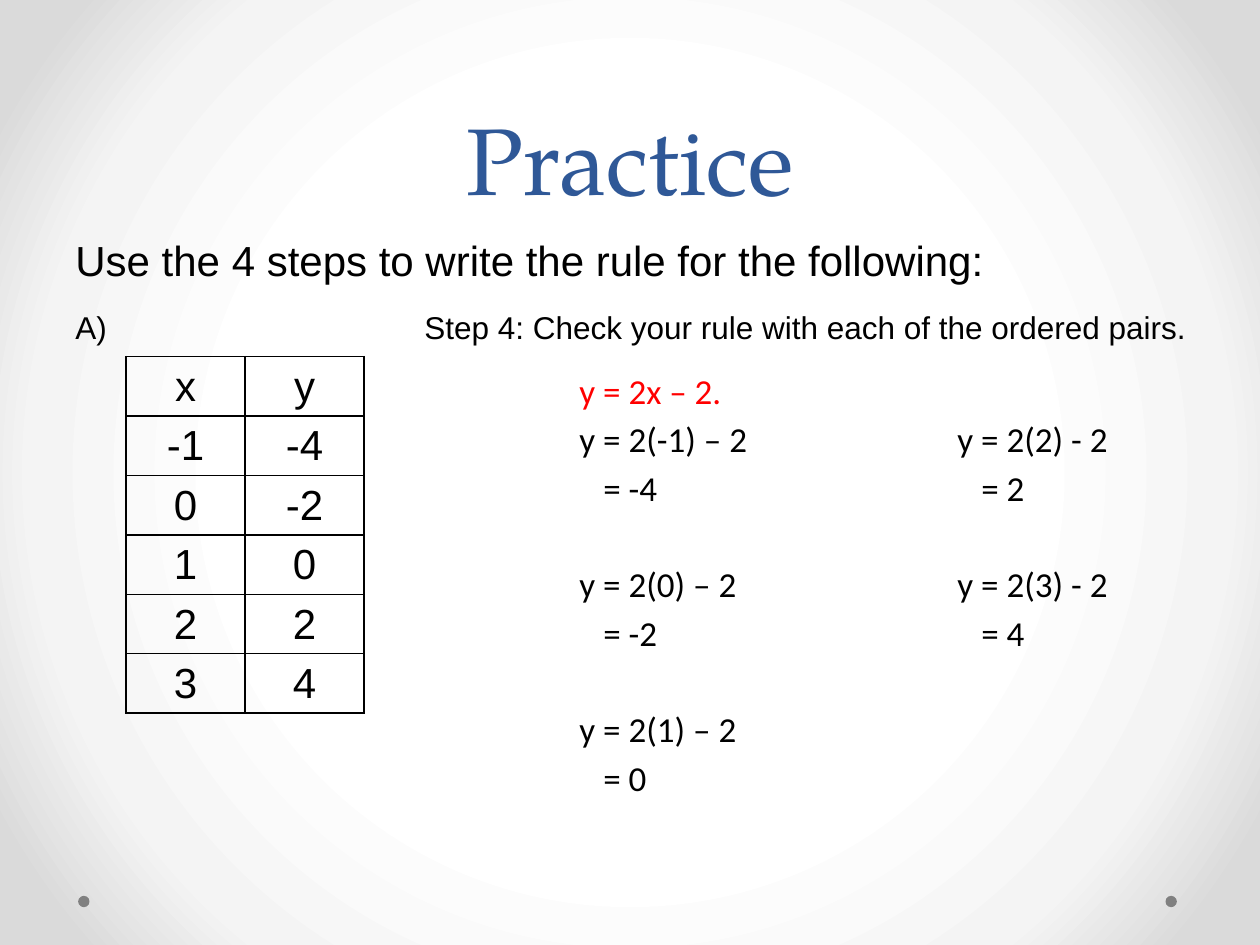
from lxml import etree
from pptx import Presentation, util as u
from pptx.dml.color import RGBColor
from pptx.enum import shapes, text
from pptx.oxml import parse_xml
from pptx.oxml.ns import nsdecls, qn

HUES = {"title": "2F5897", "ink": "000000", "rule": "FF0000", "dot": "808080"}
GLOW = [(50, "FFFFFF"), (76, "F4F4F4"), (92, "DADADA")]
WIDE, HIGH = u.Inches(10), u.Inches(7.5)
COLS, ROWS = 40, 30
PAIRS = [("x", "y"), (-1, -4), (0, -2), (1, 0), (2, 2), (3, 4)]

# Tab stops in inches from the text edge
STEP = [2.77]
EQUALS = [4, 7]
ANSWER = [4.19, 7.19]


def grid(*cells):
    """Turn columns and rows (x, y, w, h) into lengths."""
    return [int(n * side) for n, side in zip(cells, (WIDE / COLS, HIGH / ROWS) * 2)]


def write(par, words, size=20, font="Calibri", hue="ink", align=None,
          line=1.15, before=0, after=0, tabs=()):
    par.alignment, par.line_spacing = align, line
    par.space_before, par.space_after = u.Pt(before), u.Pt(after)
    run = par.add_run()
    run.text = str(words)
    run.font.size, run.font.name = u.Pt(size), font
    run.font.color.rgb = RGBColor.from_string(HUES[hue])
    if tabs:
        stops = etree.SubElement(par._p.get_or_add_pPr(), qn("a:tabLst"))
        for stop in tabs:
            etree.SubElement(stops, qn("a:tab"), pos=str(u.Inches(stop)), algn="l")


def box(slide, cells, anchor=text.MSO_ANCHOR.TOP):
    frame = slide.shapes.add_textbox(*grid(*cells)).text_frame
    frame.word_wrap, frame.vertical_anchor = True, anchor
    return frame


def paint(slide):
    stops = "".join(f'<a:gs pos="{pos * 1000}"><a:srgbClr val="{hue}"/></a:gs>'
                    for pos, hue in GLOW)
    back = parse_xml(
        f'<p:bg {nsdecls("p", "a")}><p:bgPr><a:gradFill rotWithShape="1">'
        f'<a:gsLst>{stops}</a:gsLst><a:path path="circle">'
        '<a:fillToRect l="50000" t="50000" r="50000" b="50000"/></a:path>'
        '</a:gradFill><a:effectLst/></p:bgPr></p:bg>')
    slide._element.cSld.insert(0, back)


def dot(slide, col):
    mark = slide.shapes.add_shape(shapes.MSO_SHAPE.OVAL, *grid(col, 28.44, 0.36, 0.36))
    mark.shadow.inherit = False
    mark.fill.solid()
    mark.fill.fore_color.rgb = RGBColor.from_string(HUES["dot"])
    mark.line.fill.background()


def edge(cell):
    props = cell._tc.get_or_add_tcPr()
    for i, side in enumerate(("lnL", "lnR", "lnT", "lnB")):
        props.insert(i, parse_xml(
            f'<a:{side} {nsdecls("a")} w="{u.Pt(1)}"><a:solidFill>'
            f'<a:srgbClr val="{HUES["ink"]}"/></a:solidFill></a:{side}>'))


def chart(slide, rows, cells):
    table = slide.shapes.add_table(len(rows), len(rows[0]), *grid(*cells)).table
    table.first_row = table.horz_banding = False
    for r, row in enumerate(rows):
        for c, value in enumerate(row):
            cell = table.cell(r, c)
            cell.fill.background()
            cell.margin_left = cell.margin_right = u.Inches(0.07)
            cell.margin_top = cell.margin_bottom = 0
            write(cell.text_frame.paragraphs[0], value, size=24, font="Arial",
                  align=text.PP_ALIGN.CENTER)
            edge(cell)


def body(slide):
    lines = [
        ("Use the 4 steps to write the rule for the following:",
         dict(size=24, font="Arial", after=10)),
        ("A)\tStep 4: Check your rule with each of the ordered pairs.",
         dict(size=18, font="Arial", after=10, tabs=STEP)),
        ("\ty = 2x – 2.", dict(hue="rule", tabs=EQUALS)),
    ]
    # Each check is an equation over its answer, with a line's gap between checks
    checks = [("\ty = 2(-1) – 2\ty = 2(2) - 2", "\t= -4\t= 2"),
              ("\ty = 2(0) – 2\ty = 2(3) - 2", "\t= -2\t= 4"),
              ("\ty = 2(1) – 2", "\t= 0")]
    for i, (sum_, result) in enumerate(checks):
        lines.append((sum_, dict(before=27.7 if i else 0, tabs=EQUALS)))
        lines.append((result, dict(tabs=ANSWER)))
    frame = box(slide, (2, 7, 37, 19.8))
    for i, (words, form) in enumerate(lines):
        write(frame.add_paragraph() if i else frame.paragraphs[0], words, **form)


def main():
    deck = Presentation()
    deck.slide_width, deck.slide_height = WIDE, HIGH
    slide = deck.slides.add_slide(deck.slide_layouts[6])
    # Backdrop and corner dots
    paint(slide)
    for col in (37, 2.48):
        dot(slide, col)
    # Title
    head = box(slide, (2, 0, 36, 7), text.MSO_ANCHOR.BOTTOM)
    write(head.paragraphs[0], "Practice", size=54, font="TeX Gyre Pagella",
          hue="title", align=text.PP_ALIGN.CENTER, line=u.Pt(58))
    # Worked steps and table of pairs
    body(slide)
    chart(slide, PAIRS, (4, 11.32, 7.56, 11.32))
    deck.save("out.pptx")


if __name__ == "__main__":
    main()
